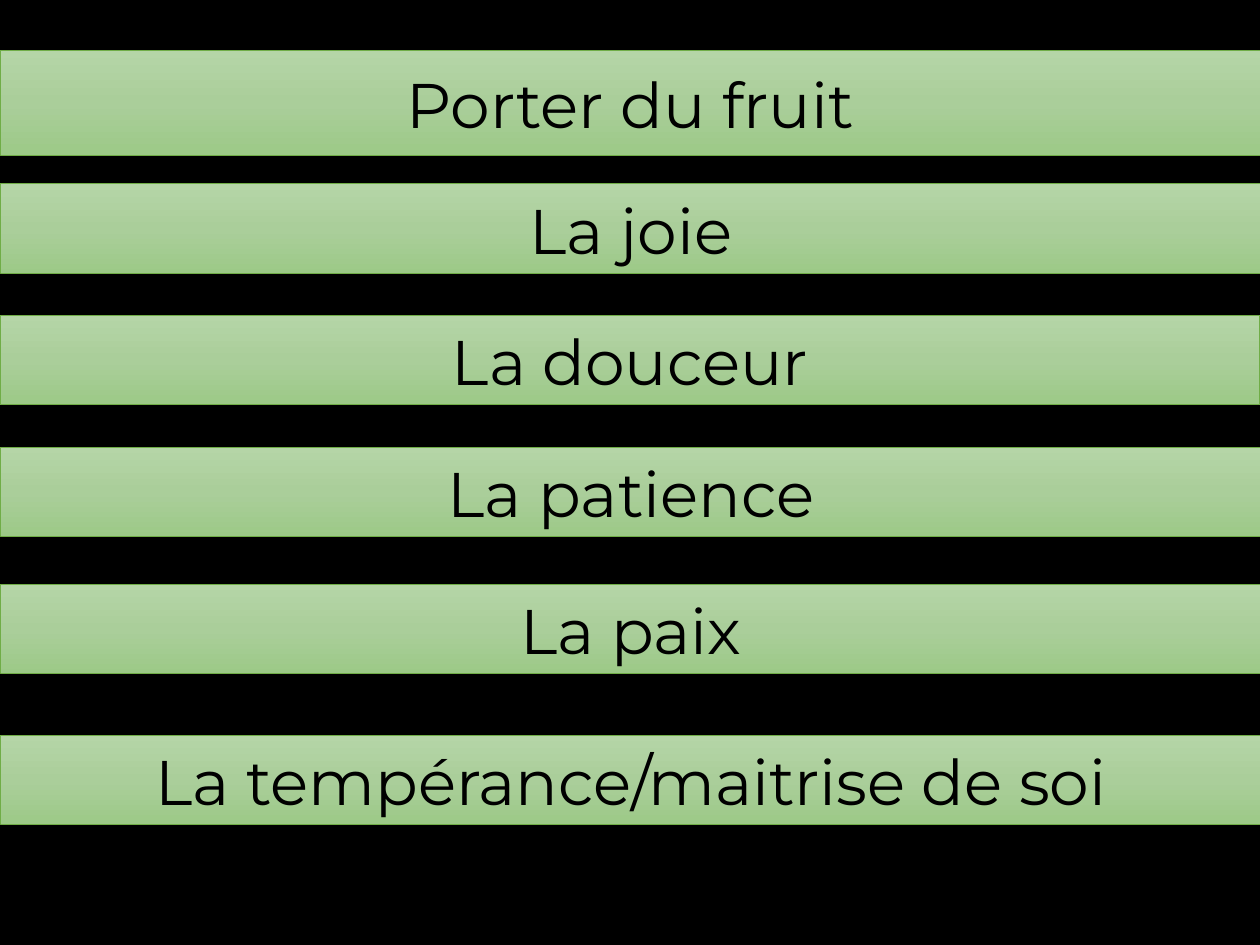
from copy import deepcopy

from pptx import Presentation
from pptx.dml.color import RGBColor
from pptx.enum.shapes import MSO_SHAPE
from pptx.enum.text import MSO_ANCHOR, MSO_AUTO_SIZE, PP_ALIGN
from pptx.oxml.ns import qn
from pptx.util import Inches, Pt

WIDTH, HEIGHT, BAR = 1260, 945, 90
COLORS = {
    "back": "000000",
    "text": "000000",
    "edge": "70AD47",
    "top": "B5D5A7",
    "middle": "AACE9A",
    "bottom": "9CC987",
}
TITLE = ("Porter du fruit", 0, 58)
FRUITS = [
    ("La joie", 1, 184),
    ("La douceur", 0, 315),
    ("La patience", 1, 447),
    ("La paix", 1, 584),
    ("La tempérance/maitrise de soi", 1, 735),
]


def px(count):
    return Inches(count / 126)


def color(name):
    return RGBColor.from_string(COLORS[name])


def shade(fill):
    """Fill from top to bottom through three evenly spaced greens."""
    fill.gradient()
    fill.gradient_angle = 270
    first = fill._xPr.find(".//" + qn("a:gs"))
    first.addnext(deepcopy(first))
    names = ("top", "middle", "bottom")
    for stop, name, place in zip(fill.gradient_stops, names, (0, 0.5, 1)):
        stop.color.rgb = color(name)
        stop.position = place


def write(frame, words):
    frame.word_wrap = True
    frame.auto_size = MSO_AUTO_SIZE.SHAPE_TO_FIT_TEXT
    frame.vertical_anchor = MSO_ANCHOR.MIDDLE
    line = frame.paragraphs[0]
    line.alignment = PP_ALIGN.CENTER
    run = line.add_run()
    run.text = words
    run.font.name = "Montserrat"
    run.font.size = Pt(36)
    run.font.color.rgb = color("text")


def style(bar, words, left, top):
    bar.left, bar.top = px(left), px(top)
    bar.width, bar.height = px(WIDTH), px(BAR)
    shade(bar.fill)
    bar.line.color.rgb = color("edge")
    bar.line.width = Pt(0.5)
    bar.shadow.inherit = False
    write(bar.text_frame, words)


def add_bar(slide, words, left, top):
    bar = slide.shapes.add_shape(
        MSO_SHAPE.RECTANGLE, px(left), px(top), px(WIDTH), px(BAR))
    style(bar, words, left, top)


def main():
    deck = Presentation()
    deck.slide_width, deck.slide_height = px(WIDTH), px(HEIGHT)
    slide = deck.slides.add_slide(deck.slide_layouts[5])
    slide.background.fill.solid()
    slide.background.fill.fore_color.rgb = color("back")
    style(slide.shapes.title, *TITLE)
    for fruit in FRUITS:
        add_bar(slide, *fruit)
    deck.save("out.pptx")


if __name__ == "__main__":
    main()
